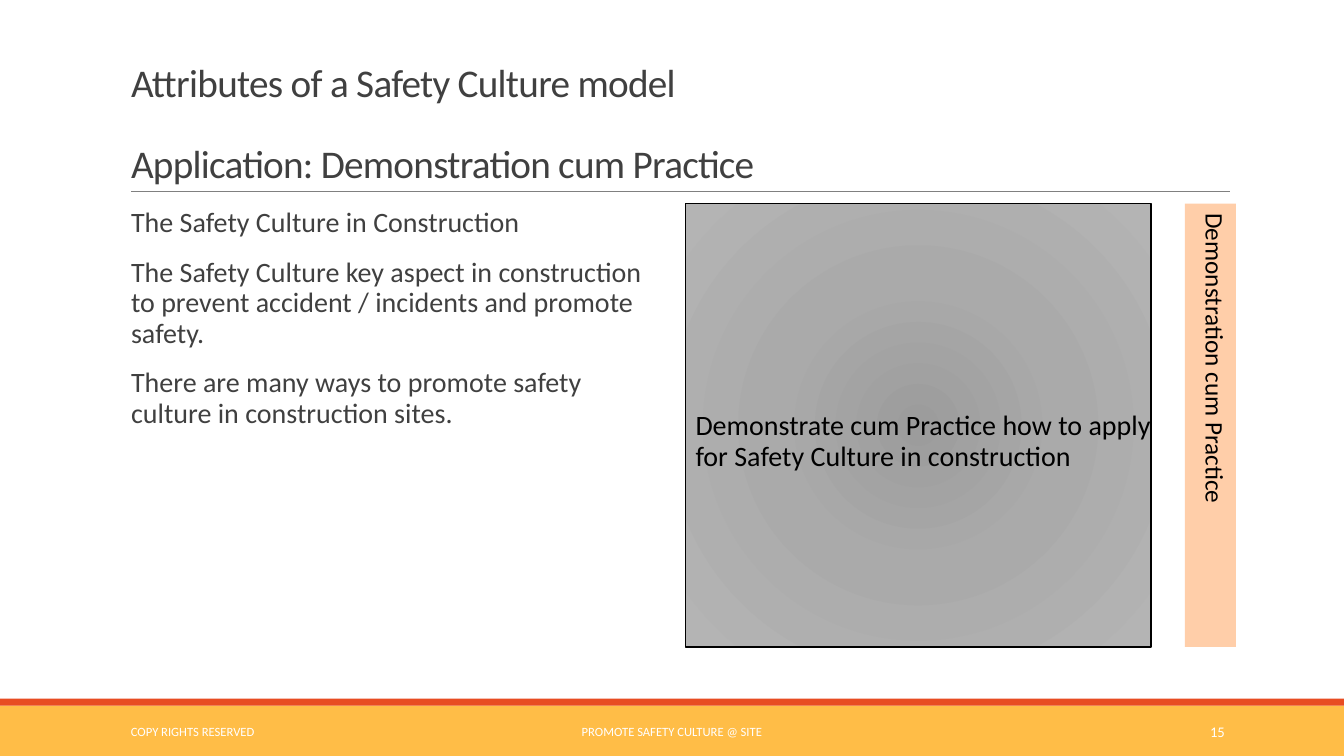
from lxml.etree import SubElement
from pptx import Presentation
from pptx.dml.color import RGBColor
from pptx.enum.shapes import MSO_CONNECTOR, MSO_SHAPE
from pptx.enum.text import MSO_ANCHOR, MSO_AUTO_SIZE, PP_ALIGN
from pptx.oxml import parse_xml
from pptx.oxml.ns import nsdecls, qn
from pptx.util import Pt

AMBER = RGBColor(0xFF, 0xBD, 0x47)
RED = RGBColor(0xE8, 0x4C, 0x22)
PEACH = RGBColor(0xFF, 0xCE, 0xA9)
RULE = RGBColor(0x80, 0x80, 0x80)
DARK = RGBColor(0x40, 0x40, 0x40)
BLACK = RGBColor(0, 0, 0)
WHITE = RGBColor(0xFF, 0xFF, 0xFF)
GREYS = ((0, RGBColor(0x9C, 0x9C, 0x9C)),
         (45, RGBColor(0xAA, 0xAA, 0xAA)),
         (100, RGBColor(0xB4, 0xB4, 0xB4)))
WIDE, HIGH = 960, 540
LEFT = 86.4


def place(shape, box):
    shape.left, shape.top, shape.width, shape.height = map(Pt, box)


def write(shape, lines, size, color, anchor=MSO_ANCHOR.TOP, align=PP_ALIGN.LEFT,
          inset=(7.2, 3.6, 7.2, 3.6), line=1.0, before=0, after=0, track=0):
    frame = shape.text_frame
    frame.word_wrap = True
    frame.auto_size = MSO_AUTO_SIZE.NONE
    frame.vertical_anchor = anchor
    (frame.margin_left, frame.margin_top,
     frame.margin_right, frame.margin_bottom) = map(Pt, inset)
    for i, text in enumerate(lines):
        para = frame.add_paragraph() if i else frame.paragraphs[0]
        props = para._p.get_or_add_pPr()
        props.set("marL", "0")
        props.set("indent", "0")
        SubElement(props, qn("a:buNone"))
        para.alignment = align
        para.line_spacing = line
        para.space_before = Pt(before if i else 0)
        para.space_after = Pt(after)
        run = para.add_run()
        run.text = text
        run.font.name = "Calibri"
        run.font.size = Pt(size)
        run.font.color.rgb = color
        if track:
            run._r.get_or_add_rPr().set("spc", str(int(track * 100)))


def block(slide, box, color):
    shape = slide.shapes.add_shape(MSO_SHAPE.RECTANGLE, *map(Pt, box))
    shape.shadow.inherit = False
    shape.fill.solid()
    shape.fill.fore_color.rgb = color
    shape.line.fill.background()
    return shape


def head(slide, box):
    # Title with a thin rule along its foot
    x, y, w, h = box
    title = slide.shapes.title
    place(title, box)
    write(title, ["Attributes of a Safety Culture model",
                  "Application: Demonstration cum Practice"],
          28, DARK, anchor=MSO_ANCHOR.BOTTOM, line=0.85, before=29, track=-0.5)
    foot = Pt(y + h)
    rule = slide.shapes.add_connector(
        MSO_CONNECTOR.STRAIGHT, Pt(x + 7.2), foot, Pt(x + w), foot)
    rule.line.color.rgb = RULE
    rule.line.width = Pt(0.5)
    SubElement(rule._element.spPr, qn("a:effectLst"))


def points(slide, box):
    # Body text on the left
    body = slide.placeholders[1]
    place(body, box)
    write(body, ["The Safety Culture in Construction",
                 "The Safety Culture key aspect in construction to prevent "
                 "accident / incidents and promote safety.",
                 "There are many ways to promote safety culture in "
                 "construction sites."],
          20, DARK, inset=(7.2, 3.6, 0, 3.6), line=0.9, before=12, after=2)


def panel(slide, box):
    # Grey panel with a radial gradient
    body = slide.placeholders[2]
    place(body, box)
    stops = "".join(f'<a:gs pos="{pos * 1000}"><a:srgbClr val="{tone}"/></a:gs>'
                    for pos, tone in GREYS)
    body._element.spPr.append(parse_xml(
        f'<a:gradFill {nsdecls("a")} rotWithShape="1"><a:gsLst>{stops}</a:gsLst>'
        '<a:path path="circle"><a:fillToRect l="50000" t="50000" r="50000" '
        'b="50000"/></a:path></a:gradFill>'))
    body.line.color.rgb = BLACK
    body.line.width = Pt(1)
    write(body, ["Demonstrate cum Practice how to apply for Safety Culture "
                 "in construction"],
          20, BLACK, inset=(7.2, 148.6, 0, 3.6), line=0.9)


def tab(slide, box):
    # Vertical label on the right
    label = block(slide, box, PEACH)
    write(label, ["Demonstration cum Practice"], 18, BLACK)
    label.text_frame._txBody.bodyPr.set("vert", "eaVert")


def base(slide, box):
    # Footer band with its three labels
    x, y, w, h = box
    strip = 5
    block(slide, (x, y + strip, w, h - strip), AMBER)
    block(slide, (x, y, w, strip), RED)
    for left, width, text, size, align in (
            (LEFT, 194.4, "COPY RIGHTS RESERVED", 9, PP_ALIGN.LEFT),
            (290.2, 379.4, "PROMOTE SAFETY CULTURE @ SITE", 9, PP_ALIGN.CENTER),
            (779, 103, "15", 10.5, PP_ALIGN.RIGHT)):
        note = slide.shapes.add_textbox(
            Pt(x + left), Pt(y + 9.3), Pt(width), Pt(28.8))
        write(note, [text], size, WHITE, anchor=MSO_ANCHOR.MIDDLE, align=align)


def main():
    deck = Presentation()
    deck.slide_width, deck.slide_height = Pt(WIDE), Pt(HIGH)
    slide = deck.slides.add_slide(deck.slide_layouts[3])
    top, tall = 145.4, 316.8
    base(slide, (0, 499, WIDE, 41))
    head(slide, (LEFT, 22.3, 792, 114.5))
    points(slide, (LEFT, top, 388.8, tall))
    panel(slide, (489.6, top, 332.6, tall))
    tab(slide, (846.4, top, 36.4, tall))
    deck.save("out.pptx")


if __name__ == "__main__":
    main()
